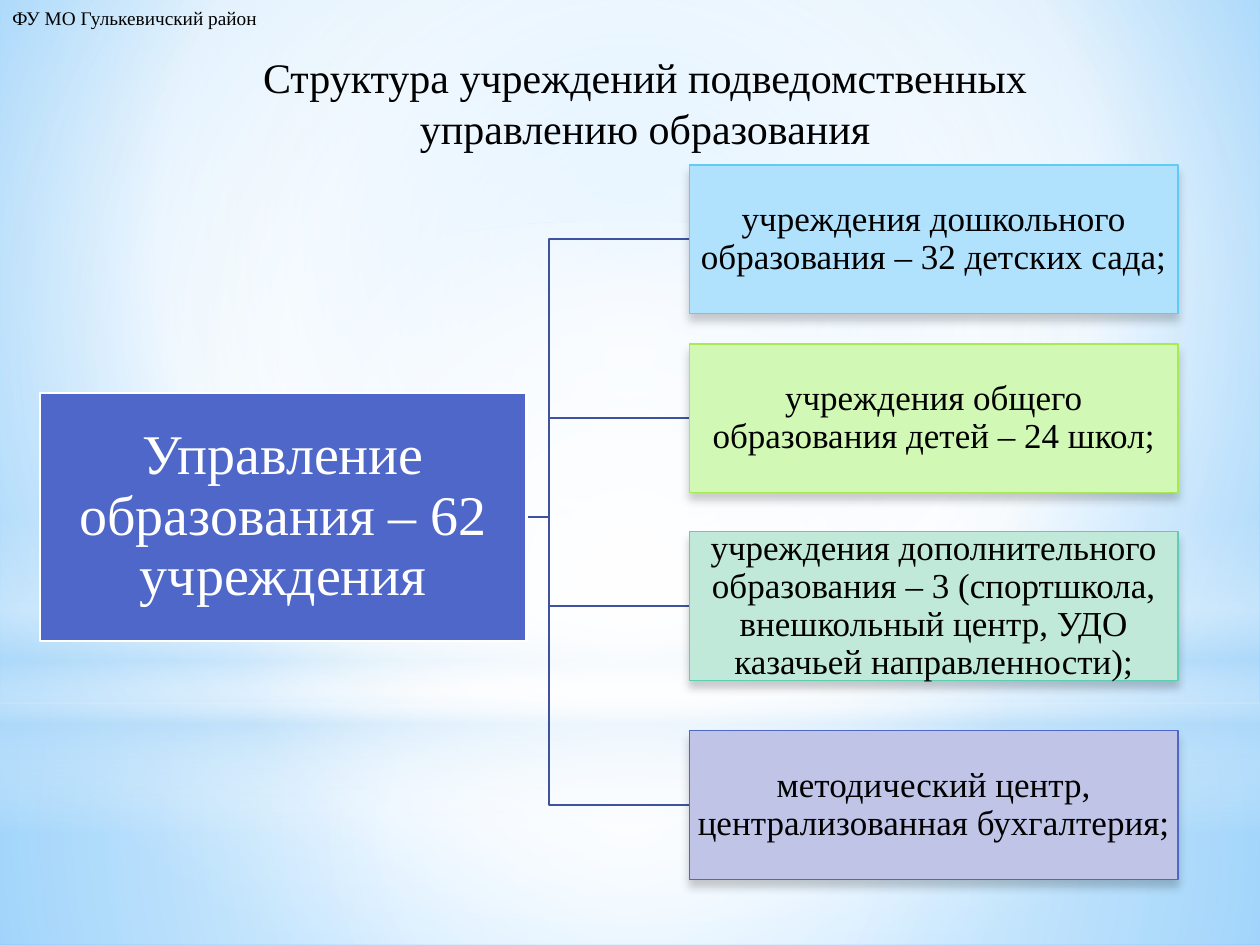
from pptx import Presentation
from pptx.dml.color import RGBColor
from pptx.enum.shapes import MSO_SHAPE
from pptx.enum.text import MSO_ANCHOR, MSO_AUTO_SIZE, PP_ALIGN
from pptx.oxml import parse_xml
from pptx.oxml.ns import nsdecls, qn
from pptx.util import Inches, Pt

RECTANGLE, OVAL = MSO_SHAPE.RECTANGLE, MSO_SHAPE.OVAL
TOP, MIDDLE = MSO_ANCHOR.TOP, MSO_ANCHOR.MIDDLE
CENTER, LEFT = PP_ALIGN.CENTER, PP_ALIGN.LEFT
FIT_NONE, FIT_SHAPE = MSO_AUTO_SIZE.NONE, MSO_AUTO_SIZE.SHAPE_TO_FIT_TEXT

FONT = "Times New Roman"
BLACK = RGBColor(0x00, 0x00, 0x00)
WHITE = RGBColor(0xFF, 0xFF, 0xFF)
INDIGO = RGBColor(0x4E, 0x67, 0xC8)
BRANCH = RGBColor(0x3E, 0x52, 0xA0)
SKY = RGBColor(0xB4, 0xDC, 0xFA)
LIGHT_BLUE = RGBColor(0x9E, 0xD5, 0xFF)
BRIGHT_BLUE = RGBColor(0x5B, 0xB9, 0xFF)

BACKGROUND_STOPS = [(0, LIGHT_BLUE, 100), (60, WHITE, 100), (100, BRIGHT_BLUE, 100)]
GLOWS = [
    (RECTANGLE, (0, 5.58, 10, 1.92),
     [(0, WHITE, 91), (37, WHITE, 76), (100, SKY, 79)], (50, 50, 50, 50)),
    (RECTANGLE, (0, 0, 10, 5.58),
     [(0, WHITE, 89), (48, WHITE, 62), (100, SKY, 79)], (50, 50, 50, 50)),
    (RECTANGLE, (0, 4.12, 10, 2.5),
     [(0, WHITE, 0), (29, WHITE, 30), (45, SKY, 40), (55, WHITE, 26),
      (65, SKY, 60), (100, WHITE, 0)], None),
    (OVAL, (0, 1.75, 10, 5.58), [(0, WHITE, 100), (56, WHITE, 0)], (50, 50, 50, 50)),
]

ROOT_BOX = (0.32, 3.12, 3.86, 1.97)
CARD_LEFT, CARD_WIDTH, CARD_HEIGHT = 5.47, 3.88, 1.18
CARDS = [
    (1.31, "учреждения дошкольного образования – 32 детских сада;",
     RGBColor(0xB1, 0xE2, 0xFD), RGBColor(0x5E, 0xCC, 0xF3)),
    (2.73, "учреждения общего образования детей – 24 школ;",
     RGBColor(0xD1, 0xF8, 0xB5), RGBColor(0xA7, 0xEA, 0x52)),
    (4.22, "учреждения дополнительного образования – 3 (спортшкола, "
     "внешкольный центр, УДО казачьей направленности);",
     RGBColor(0xC0, 0xE9, 0xDA), RGBColor(0x5D, 0xCE, 0xAF)),
    (5.80, "методический центр, централизованная бухгалтерия;",
     RGBColor(0xC0, 0xC5, 0xE8), INDIGO),
]


def set_attributes(target, values):
    """Set every attribute named in the dict on the target."""
    for name, value in values.items():
        setattr(target, name, value)


def set_gradient(element, stops, focus):
    """Swap the element's solid fill for a circular or vertical gradient."""
    stop_xml = "".join(
        f'<a:gs pos="{position * 1000}"><a:srgbClr val="{color}">'
        f'<a:alpha val="{alpha * 1000}"/></a:srgbClr></a:gs>'
        for position, color, alpha in stops)
    if focus:
        sides = " ".join(f'{side}="{value * 1000}"' for side, value in zip("ltrb", focus))
        direction = f'<a:path path="circle"><a:fillToRect {sides}/></a:path>'
    else:
        direction = '<a:lin ang="5400000" scaled="0"/>'
    solid = element.find(qn("a:solidFill"))
    solid.getparent().replace(solid, parse_xml(
        f'<a:gradFill {nsdecls("a")} rotWithShape="1">'
        f'<a:gsLst>{stop_xml}</a:gsLst>{direction}</a:gradFill>'))


def set_text(shape, text, size, color, frame_format, paragraph_format):
    """Write one formatted paragraph into the shape."""
    frame = shape.text_frame
    set_attributes(frame, frame_format)
    paragraph = frame.paragraphs[0]
    set_attributes(paragraph, paragraph_format)
    run = paragraph.add_run()
    run.text = text
    set_attributes(run.font, {"name": FONT, "size": Pt(size)})
    run.font.color.rgb = color


def add_glow(slide, kind, box, stops, focus):
    """Add a borderless translucent gradient behind the title."""
    shape = slide.shapes.add_shape(kind, *map(Inches, box))
    shape.shadow.inherit = False
    shape.fill.solid()
    shape.line.fill.background()
    set_gradient(shape.element.spPr, stops, focus)
    slide.shapes.title.element.addprevious(shape.element)


def add_branch(slide, start, end):
    """Draw an elbow line between two points."""
    middle = (start[0] + end[0]) / 2
    points = [tuple(map(Inches, point))
              for point in (start, (middle, start[1]), (middle, end[1]), end)]
    builder = slide.shapes.build_freeform(*points[0])
    builder.add_line_segments(points[1:], close=False)
    shape = builder.convert_to_shape()
    shape.shadow.inherit = False
    shape.fill.background()
    shape.line.color.rgb = BRANCH
    shape.line.width = Pt(1.25)


def add_box(slide, box, text, size, color, fill, line, line_width, inset):
    """Add a filled rectangle with centred text."""
    shape = slide.shapes.add_shape(RECTANGLE, *map(Inches, box))
    shape.shadow.inherit = False
    shape.fill.solid()
    shape.fill.fore_color.rgb = fill
    shape.line.color.rgb = line
    shape.line.width = Pt(line_width)
    margins = {f"margin_{side}": Inches(inset) for side in ("left", "top", "right", "bottom")}
    set_text(shape, text, size, color,
             {"word_wrap": True, "vertical_anchor": MIDDLE, **margins},
             {"alignment": CENTER, "line_spacing": 0.9})
    return shape


def add_shadow(shape):
    """Give the shape a soft shadow below it."""
    shape.element.spPr.find(qn("a:effectLst")).append(parse_xml(
        f'<a:outerShdw {nsdecls("a")} blurRad="{Pt(5)}" dist="{Pt(4)}" dir="5400000" '
        'rotWithShape="0"><a:srgbClr val="000000"><a:alpha val="20000"/>'
        '</a:srgbClr></a:outerShdw>'))


def add_title(slide):
    """Place and format the slide title."""
    title = slide.shapes.title
    box = map(Inches, (1.22, 0.36, 7.8, 0.84))
    set_attributes(title, dict(zip(("left", "top", "width", "height"), box)))
    set_text(title, "Структура учреждений подведомственных управлению образования",
             24, BLACK,
             {"word_wrap": True, "auto_size": FIT_NONE, "vertical_anchor": TOP},
             {"alignment": CENTER})


def add_header(slide):
    """Add the small label in the top left corner."""
    label = slide.shapes.add_textbox(*map(Inches, (0, 0, 2.25, 0.29)))
    set_text(label, "ФУ МО Гулькевичский район", 11, BLACK,
             {"word_wrap": False, "auto_size": FIT_SHAPE}, {"alignment": LEFT})


def main():
    """Build and save the slide."""
    presentation = Presentation()
    set_attributes(presentation, {"slide_width": Inches(10), "slide_height": Inches(7.5)})
    slide = presentation.slides.add_slide(presentation.slide_layouts[5])
    slide.background.fill.solid()
    background = slide.element.find(f".//{qn('p:bgPr')}")
    set_gradient(background, BACKGROUND_STOPS, (20, 10, 20, 60))
    for glow in GLOWS:
        add_glow(slide, *glow)
    add_title(slide)
    root_left, root_top, root_width, root_height = ROOT_BOX
    start = (CARD_LEFT - 2.23, root_top + root_height / 2)
    for top, *_ in reversed(CARDS):
        add_branch(slide, start, (CARD_LEFT, top + CARD_HEIGHT / 2))
    add_box(slide, ROOT_BOX, "Управление образования – 62 учреждения",
            32, WHITE, INDIGO, WHITE, 1.25, 0.02)
    for top, text, fill, line in CARDS:
        box = (CARD_LEFT, top, CARD_WIDTH, CARD_HEIGHT)
        add_shadow(add_box(slide, box, text, 20, BLACK, fill, line, 0.75, 0.01))
    add_header(slide)
    presentation.save("out.pptx")


if __name__ == "__main__":
    main()
